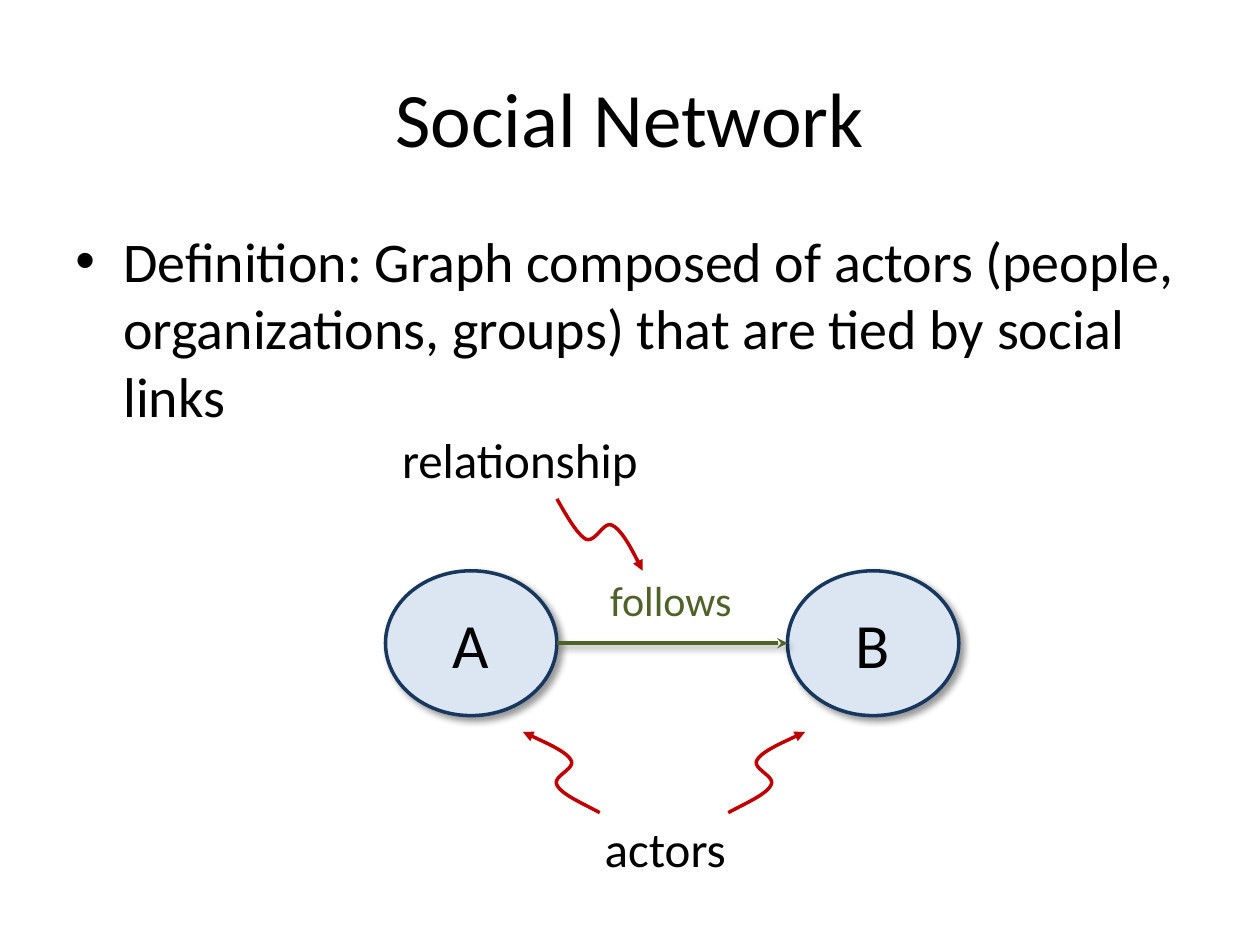
from lxml.etree import SubElement
from pptx import Presentation
from pptx.dml.color import RGBColor
from pptx.enum.shapes import MSO_CONNECTOR, MSO_SHAPE
from pptx.enum.text import MSO_ANCHOR, PP_ALIGN
from pptx.oxml.ns import qn
from pptx.util import Inches, Pt

COLORS = {"text": "000000", "node_fill": "DCE6F2", "node_line": "17375E",
          "follows": "4F6228", "pointer": "C00000"}
FONT = "Calibri"

TITLE = "Social Network"
DEFINITION = ("Definition: Graph composed of actors (people, organizations, groups) "
              "that are tied by social links")

# text, left, top, width, height, size, colour
LABELS = [
    ("follows", 4.59, 4.51, 1.47, 0.5, 24, "follows"),
    ("actors", 4.59, 6.45, 1.38, 0.57, 28, "text"),
    ("relationship", 3, 3.36, 2.25, 0.57, 28, "text"),
]

NODES = [("A", 3.06), ("B", 6.25)]
NODE_TOP, NODE_WIDTH, NODE_HEIGHT = 4.53, 1.36, 1.15

# Each pointer is a chain of cubic Bézier curves: a start, then three points per curve.
RELATIONSHIP_POINTER = [
    (4.42, 3.96), (4.5, 4.1), (4.58, 4.24), (4.65, 4.28), (4.73, 4.31),
    (4.79, 4.13), (4.86, 4.17), (4.94, 4.21), (5.02, 4.37), (5.1, 4.53)]
RIGHT_ACTOR_POINTER = [
    (5.78, 6.45), (5.93, 6.37), (6.09, 6.3), (6.12, 6.23), (6.16, 6.16),
    (5.96, 6.1), (6.01, 6.03), (6.05, 5.96), (6.22, 5.89), (6.39, 5.81)]
MIRROR_SUM = 10.54
LEFT_ACTOR_POINTER = [(MIRROR_SUM - x, y) for x, y in RIGHT_ACTOR_POINTER]
STEPS_PER_CURVE = 12


def color(name):
    return RGBColor.from_string(COLORS[name])


def write(shape, text, size, color_name="text", align=PP_ALIGN.CENTER,
          anchor=MSO_ANCHOR.TOP):
    frame = shape.text_frame
    frame.word_wrap = True
    frame.vertical_anchor = anchor
    paragraph = frame.paragraphs[0]
    paragraph.alignment = align
    run = paragraph.add_run()
    run.text = text
    run.font.size = Pt(size)
    run.font.name = FONT
    run.font.color.rgb = color(color_name)
    return paragraph


def add_text(slide, box, *args, **options):
    shape = slide.shapes.add_textbox(*map(Inches, box))
    return write(shape, *args, **options)


def add_bullet(paragraph, indent):
    properties = paragraph._p.get_or_add_pPr()
    properties.set("marL", str(Inches(indent)))
    properties.set("indent", str(-Inches(indent)))
    SubElement(properties, qn("a:buFont"), typeface="Arial")
    SubElement(properties, qn("a:buChar"), char="•")


def set_line(line, color_name, head=None):
    line.color.rgb = color(color_name)
    line.width = Pt(2)
    if head:
        SubElement(line._get_or_add_ln(), qn("a:tailEnd"), type=head)


def add_shadow(effects):
    shadow = SubElement(effects, qn("a:outerShdw"), blurRad=str(Pt(4)),
                        dist=str(Pt(3)), dir="2700000", algn="tl", rotWithShape="0")
    black = SubElement(shadow, qn("a:srgbClr"), val=COLORS["text"])
    SubElement(black, qn("a:alpha"), val="40000")


def add_node(slide, name, left):
    shape = slide.shapes.add_shape(
        MSO_SHAPE.OVAL, *map(Inches, (left, NODE_TOP, NODE_WIDTH, NODE_HEIGHT)))
    shape.fill.solid()
    shape.fill.fore_color.rgb = color("node_fill")
    set_line(shape.line, "node_line")
    shape.shadow.inherit = False
    add_shadow(shape._element.spPr.find(qn("a:effectLst")))
    write(shape, name, 36, anchor=MSO_ANCHOR.MIDDLE)


def add_follows_arrow(slide):
    start, end = NODES[0][1] + NODE_WIDTH, NODES[1][1]
    middle = NODE_TOP + NODE_HEIGHT / 2
    arrow = slide.shapes.add_connector(
        MSO_CONNECTOR.STRAIGHT, *map(Inches, (start, middle, end, middle)))
    set_line(arrow.line, "follows", "stealth")
    add_shadow(SubElement(arrow._element.spPr, qn("a:effectLst")))


def bezier_point(controls, t):
    weights = ((1 - t) ** 3, 3 * t * (1 - t) ** 2, 3 * t ** 2 * (1 - t), t ** 3)
    return tuple(Inches(sum(w * point[axis] for w, point in zip(weights, controls)))
                 for axis in (0, 1))


def add_pointer(slide, points):
    builder = slide.shapes.build_freeform(*map(Inches, points[0]))
    builder.add_line_segments(
        [bezier_point(points[i:i + 4], step / STEPS_PER_CURVE)
         for i in range(0, len(points) - 1, 3)
         for step in range(1, STEPS_PER_CURVE + 1)], close=False)
    shape = builder.convert_to_shape()
    shape.fill.background()
    shape.shadow.inherit = False
    set_line(shape.line, "pointer", "triangle")


def main():
    presentation = Presentation()
    presentation.slide_width, presentation.slide_height = Inches(10), Inches(7.5)
    slide = presentation.slides.add_slide(presentation.slide_layouts[6])

    add_text(slide, (0.5, 0.3, 9, 1.25), TITLE, 44, anchor=MSO_ANCHOR.MIDDLE)
    definition = add_text(slide, (0.5, 1.75, 9, 4.95), DEFINITION, 32,
                          align=PP_ALIGN.LEFT)
    add_bullet(definition, 0.38)

    for name, left in NODES:
        add_node(slide, name, left)
    add_follows_arrow(slide)
    for text, left, top, width, height, size, color_name in LABELS:
        add_text(slide, (left, top, width, height), text, size, color_name)
    for points in (RELATIONSHIP_POINTER, RIGHT_ACTOR_POINTER, LEFT_ACTOR_POINTER):
        add_pointer(slide, points)

    presentation.save("out.pptx")


if __name__ == "__main__":
    main()
